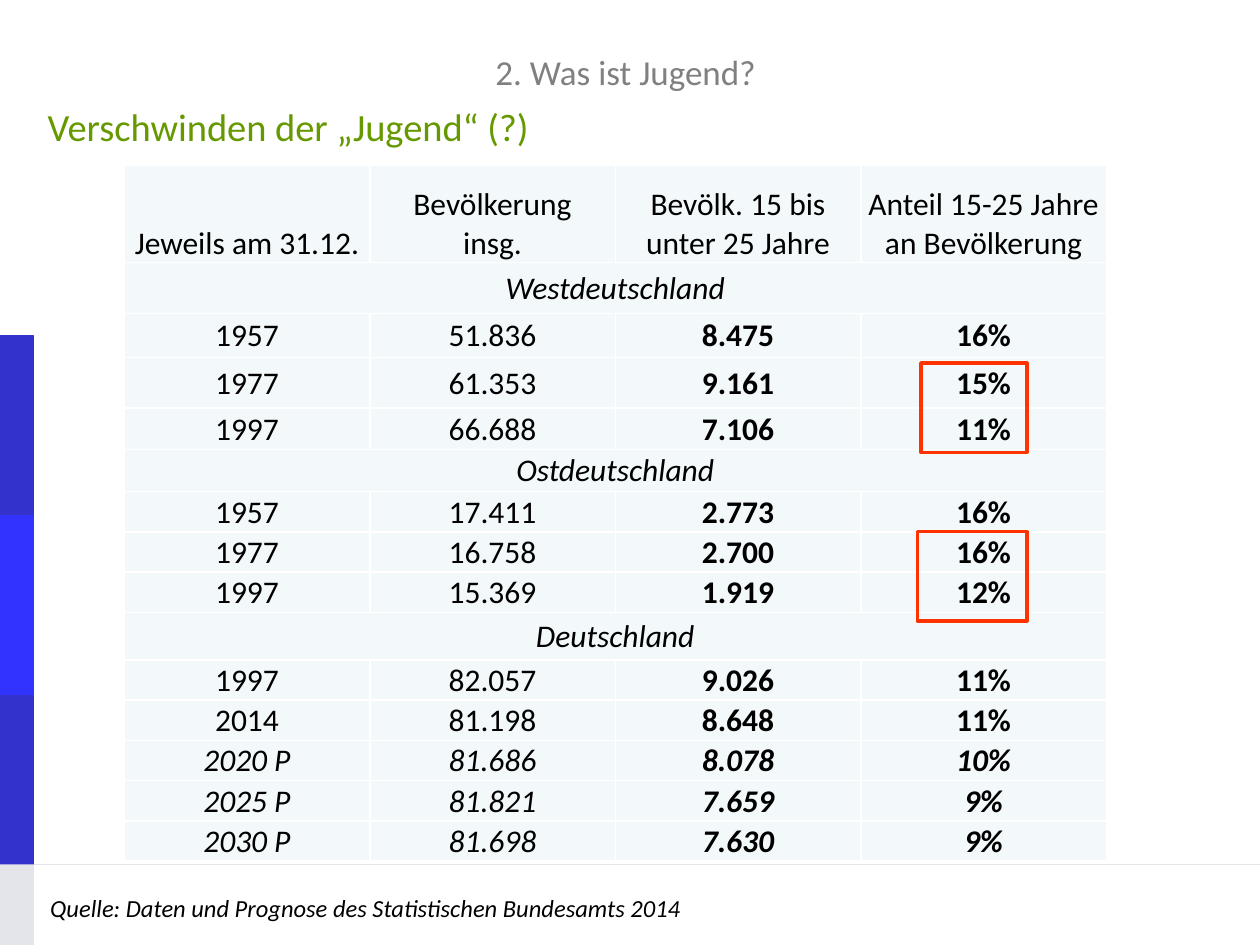
import pptx
import pptx.chart.data
import pptx.dml.color
import pptx.enum.shapes
import pptx.enum.text
import pptx.oxml
import pptx.oxml.ns
import pptx.util
from pptx.util import Pt

FONT = "Calibri"
BLACK = "000000"
WHITE = "FFFFFF"
CELL_FILL = "F3F9FA"
SIDEBAR_BLUE = "3333CC"
SIDEBAR_BRIGHT = "3333FF"
PALE_GREY = "E4E5EA"
MARKER_RED = "FF3300"

ANCHOR = pptx.enum.text.MSO_ANCHOR
ALIGN = pptx.enum.text.PP_ALIGN

HEADERS = [
    "Jeweils am 31.12.",
    "Bevölkerung\ninsg.",
    "Bevölk. 15 bis unter 25 Jahre",
    "Anteil 15-25 Jahre an Bevölkerung",
]
# A row with one entry is a region heading across the table.
ROWS = [
    ["Westdeutschland"],
    ["1957", "51.836", "8.475", "16%"],
    ["1977", "61.353", "9.161", "15%"],
    ["1997", "66.688", "7.106", "11%"],
    ["Ostdeutschland"],
    ["1957", "17.411", "2.773", "16%"],
    ["1977", "16.758", "2.700", "16%"],
    ["1997", "15.369", "1.919", "12%"],
    ["Deutschland"],
    ["1997", "82.057", "9.026", "11%"],
    ["2014", "81.198", "8.648", "11%"],
    ["2020 P", "81.686", "8.078", "10%"],
    ["2025 P", "81.821", "7.659", "9%"],
    ["2030 P", "81.698", "7.630", "9%"],
]
ROW_HEIGHTS = [55.4, 29.2, 25.2, 28.8, 23.6, 24.2] + [23] * 3 + [27.2] + [23] * 5
COLUMN_WIDTH = 140.3


def color(hex_string):
    return pptx.dml.color.RGBColor.from_string(hex_string)


def add_text(paragraph, text, size, hex_string=BLACK, bold=False, italic=False):
    """Add the text as runs, with a line break at each newline."""
    for index, line in enumerate(text.split("\n")):
        if index:
            paragraph.add_line_break()
        run = paragraph.add_run()
        run.text = line
        run.font.name = FONT
        run.font.size = Pt(size)
        run.font.bold = bold
        run.font.italic = italic
        run.font.color.rgb = color(hex_string)


def add_rectangle(slide, box, fill=None, line=None, line_width=0.75):
    shape = slide.shapes.add_shape(
        pptx.enum.shapes.MSO_SHAPE.RECTANGLE, *map(Pt, box))
    shape.shadow.inherit = False
    if fill:
        shape.fill.solid()
        shape.fill.fore_color.rgb = color(fill)
    else:
        shape.fill.background()
    if line:
        shape.line.color.rgb = color(line)
        shape.line.width = Pt(line_width)
    else:
        shape.line.fill.background()


def add_footer_line(slide):
    connector = slide.shapes.add_connector(
        pptx.enum.shapes.MSO_CONNECTOR.STRAIGHT, Pt(0), Pt(494), Pt(720), Pt(494))
    connector.line.color.rgb = color(PALE_GREY)
    connector.line.width = Pt(0.5)
    properties = connector._element.spPr
    properties.append(properties.makeelement(pptx.oxml.ns.qn("a:effectLst"), {}))


def add_sidebar(slide):
    add_rectangle(slide, (0, 192, 19.4, 102.4), SIDEBAR_BLUE, SIDEBAR_BLUE)
    add_footer_line(slide)
    add_rectangle(slide, (0, 396.7, 19.4, 97.3), SIDEBAR_BLUE, SIDEBAR_BLUE)
    add_rectangle(slide, (0, 494, 19.4, 46), PALE_GREY)
    add_rectangle(slide, (0, 294.4, 19.4, 102.6), SIDEBAR_BRIGHT, SIDEBAR_BRIGHT)


def add_text_box(slide, box, text, size, hex_string=BLACK, italic=False,
                 anchor=ANCHOR.TOP, wrap=True):
    frame = slide.shapes.add_textbox(*map(Pt, box)).text_frame
    frame.word_wrap = wrap
    frame.vertical_anchor = anchor
    if not wrap:
        frame.auto_size = pptx.enum.text.MSO_AUTO_SIZE.SHAPE_TO_FIT_TEXT
    add_text(frame.paragraphs[0], text, size, hex_string, italic=italic)


def set_title(slide, text):
    title = slide.shapes.title
    title.left, title.top, title.width, title.height = map(Pt, (20.2, 20.9, 674.6, 39.6))
    title.text_frame.vertical_anchor = ANCHOR.MIDDLE
    paragraph = title.text_frame.paragraphs[0]
    paragraph.alignment = ALIGN.CENTER
    add_text(paragraph, text, 20, "808080")


def set_borders(cell):
    properties = cell._tc.get_or_add_tcPr()
    for side in ("lnL", "lnR", "lnT", "lnB"):
        properties.append(pptx.oxml.parse_xml(
            f'<a:{side} {pptx.oxml.ns.nsdecls("a")} w="{Pt(1)}"><a:solidFill>'
            f'<a:srgbClr val="{WHITE}"/></a:solidFill></a:{side}>'))


def format_cell(cell, anchor):
    set_borders(cell)
    cell.fill.solid()
    cell.fill.fore_color.rgb = color(CELL_FILL)
    cell.margin_left = cell.margin_right = cell.margin_top = Pt(0.7)
    cell.margin_bottom = Pt(0)
    cell.vertical_anchor = anchor
    cell.text_frame.paragraphs[0].alignment = ALIGN.CENTER


def add_population_table(slide):
    rows = [HEADERS] + ROWS
    columns = len(HEADERS)
    table = slide.shapes.add_table(
        len(rows), columns, Pt(71), Pt(94.6),
        Pt(COLUMN_WIDTH * columns), Pt(sum(ROW_HEIGHTS))).table
    table.first_row = table.horz_banding = False
    for column in table.columns:
        column.width = Pt(COLUMN_WIDTH)
    for row_index, values in enumerate(rows):
        table.rows[row_index].height = Pt(ROW_HEIGHTS[row_index])
        is_header = row_index == 0
        is_region = len(values) == 1
        for column_index in range(columns):
            format_cell(table.cell(row_index, column_index),
                        ANCHOR.BOTTOM if is_header else ANCHOR.MIDDLE)
        if is_region:
            table.cell(row_index, 0).merge(table.cell(row_index, columns - 1))
        for column_index, value in enumerate(values):
            paragraph = table.cell(row_index, column_index).text_frame.paragraphs[0]
            add_text(paragraph, value, 18,
                     bold=not is_header and column_index >= 2,
                     italic=is_region or values[0].endswith(" P"))


def main():
    presentation = pptx.Presentation()
    presentation.slide_width = Pt(720)
    presentation.slide_height = Pt(540)
    slide = presentation.slides.add_slide(presentation.slide_layouts[5])

    add_sidebar(slide)
    add_text_box(slide, (20.2, 27.4, 674.6, 89.3), "Verschwinden der „Jugend“ (?)",
                 22, "669900", anchor=ANCHOR.MIDDLE)
    set_title(slide, "2. Was ist Jugend?")
    add_text_box(slide, (21.6, 506.9, 378.7, 24.5),
                 "Quelle: Daten und Prognose des Statistischen Bundesamts 2014",
                 14, italic=True, wrap=False)
    add_population_table(slide)
    for box in ((526.3, 207.4, 60.5, 51.1), (524.2, 303.8, 62.6, 51.1)):
        add_rectangle(slide, box, line=MARKER_RED, line_width=2)

    presentation.save("out.pptx")


if __name__ == "__main__":
    main()
